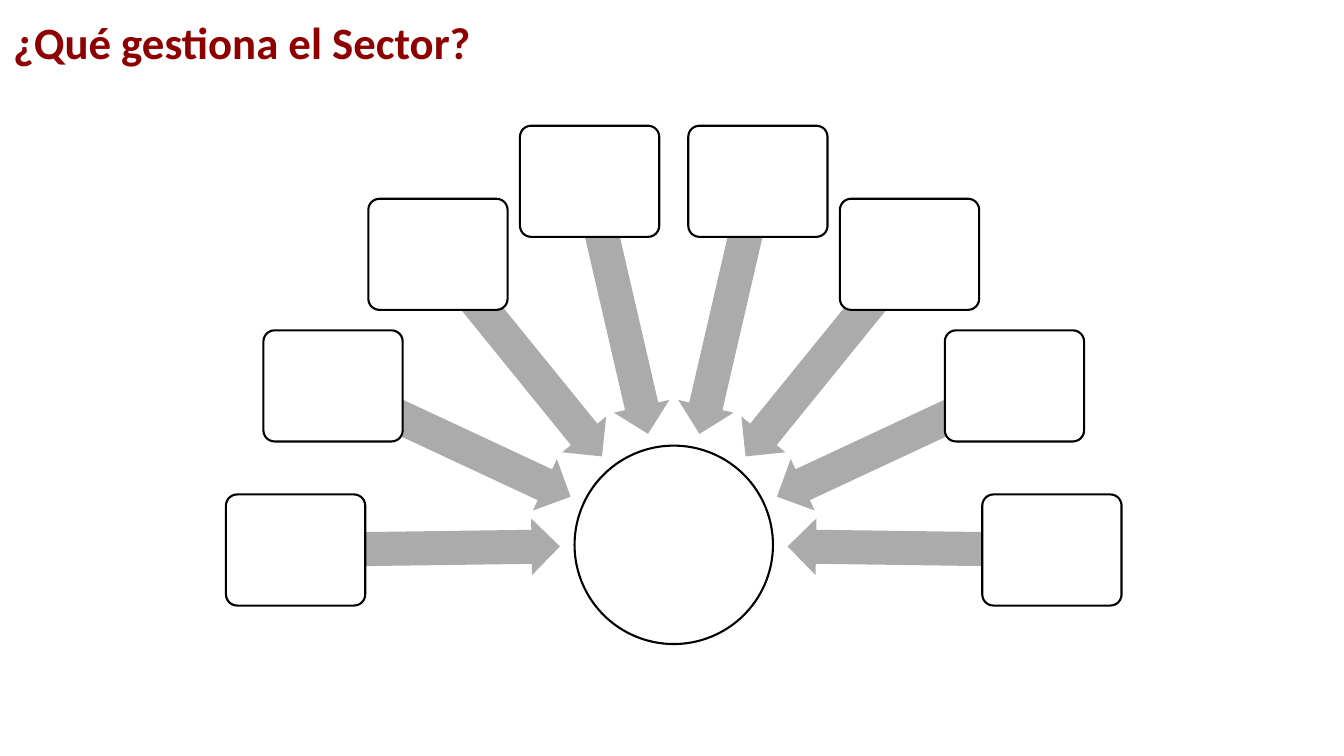
import math

from pptx import Presentation, util as u
from pptx.dml import color
from pptx.enum import shapes, text

COLORS = {"title": "8E0000", "arrow": "ABABAB", "fill": "FFFFFF", "outline": "000000"}

HUB_X, HUB_Y, HUB_SIZE = 16.98, 13.73, 5
ARC_Y, ARC_RADIUS = 13.86, 9.53
BOX_WIDTH, BOX_HEIGHT, BOX_COUNT = 3.51, 2.8, 8
ARROW_HEIGHT, TIP_DISTANCE = 1.43, 2.87


def apply_format(target, values):
    for name, value in values.items():
        setattr(target, name, value)


def rgb(name):
    return color.RGBColor.from_string(COLORS[name])


def add_centered(group, kind, center_x, center_y, width, height, fill, adjustments=()):
    shape = group.shapes.add_shape(
        kind,
        u.Cm(center_x - width / 2),
        u.Cm(center_y - height / 2),
        u.Cm(width),
        u.Cm(height),
    )
    shape.shadow.inherit = False
    shape.fill.solid()
    shape.fill.fore_color.rgb = rgb(fill)
    for index, value in enumerate(adjustments):
        shape.adjustments[index] = value
    return shape


def add_outlined(group, kind, center_x, center_y, width, height, adjustments=()):
    shape = add_centered(group, kind, center_x, center_y, width, height, "fill", adjustments)
    shape.line.color.rgb = rgb("outline")
    shape.line.width = u.Pt(1.5)


def add_arrow(group, box_x, box_y):
    distance = math.hypot(box_x - HUB_X, box_y - HUB_Y)
    angle = math.atan2(box_y - HUB_Y, box_x - HUB_X)
    middle = (distance + TIP_DISTANCE) / 2
    arrow = add_centered(
        group,
        shapes.MSO_SHAPE.LEFT_ARROW,
        HUB_X + middle * math.cos(angle),
        HUB_Y + middle * math.sin(angle),
        distance - TIP_DISTANCE,
        ARROW_HEIGHT,
        "arrow",
        (0.6, 0.5),
    )
    arrow.line.fill.background()
    arrow.rotation = math.degrees(angle) % 360


def add_title(slide, wording):
    title = slide.shapes.add_textbox(u.Cm(0), u.Cm(0.33), u.Cm(33.58), u.Cm(1.63))
    apply_format(title.text_frame, {
        "word_wrap": True,
        "vertical_anchor": text.MSO_ANCHOR.MIDDLE,
        "margin_left": u.Cm(0.33),
        "margin_right": u.Cm(0.33),
        "margin_top": u.Cm(0.18),
        "margin_bottom": u.Cm(0.18),
    })
    paragraph = title.text_frame.paragraphs[0]
    paragraph.line_spacing = 0.9
    run = paragraph.add_run()
    run.text = wording
    apply_format(run.font, {"name": "Calibri", "size": u.Pt(32), "bold": True})
    run.font.color.rgb = rgb("title")


def add_radial_diagram(slide):
    group = slide.shapes.add_group_shape()
    add_outlined(group, shapes.MSO_SHAPE.OVAL, HUB_X, HUB_Y, HUB_SIZE, HUB_SIZE)
    for index in range(BOX_COUNT):
        angle = math.pi * (1 + index / (BOX_COUNT - 1))
        box_x = HUB_X + ARC_RADIUS * math.cos(angle)
        box_y = ARC_Y + ARC_RADIUS * math.sin(angle)
        add_arrow(group, box_x, box_y)
        add_outlined(group, shapes.MSO_SHAPE.ROUNDED_RECTANGLE,
                     box_x, box_y, BOX_WIDTH, BOX_HEIGHT, (0.1,))


def main():
    presentation = Presentation()
    apply_format(presentation, {"slide_width": u.Cm(33.87), "slide_height": u.Cm(19.05)})
    slide = presentation.slides.add_slide(presentation.slide_layouts[6])
    add_title(slide, "¿Qué gestiona el Sector?")
    add_radial_diagram(slide)
    presentation.save("out.pptx")


if __name__ == "__main__":
    main()
